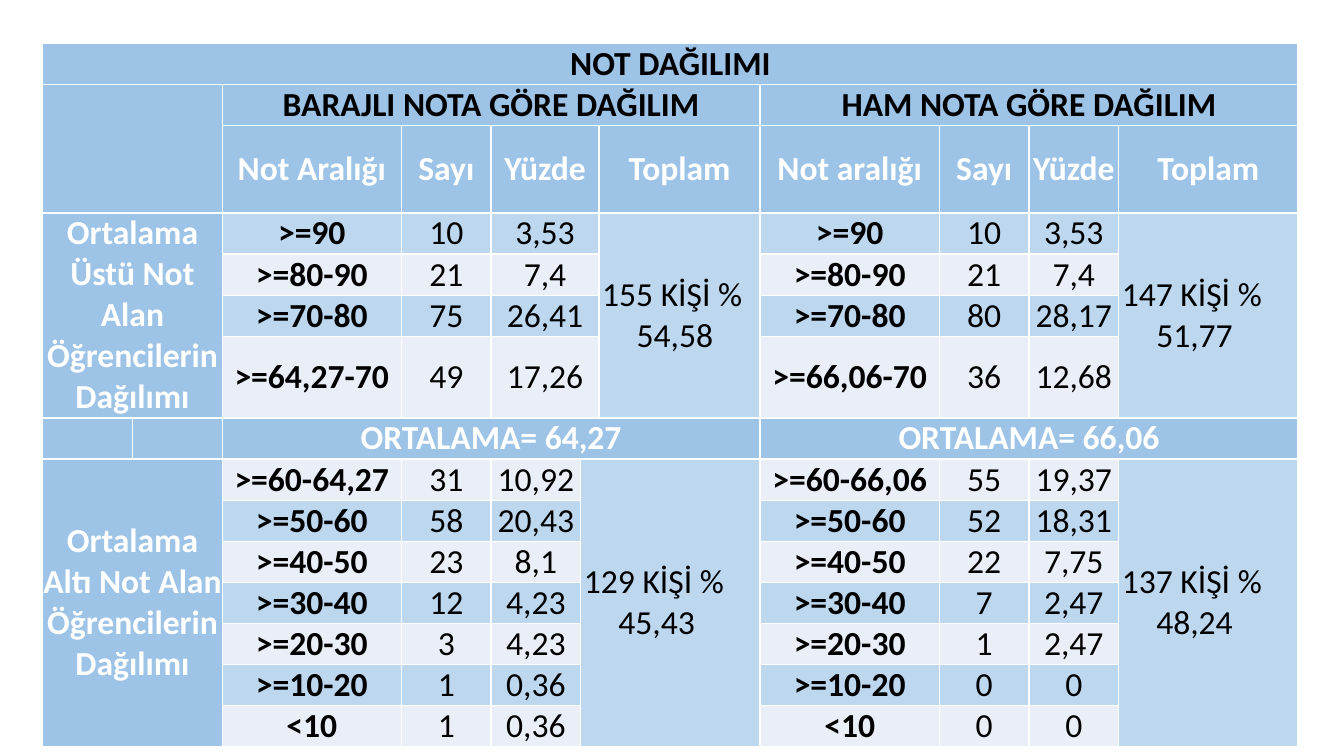
from dataclasses import dataclass

import pptx
import pptx.dml.color
import pptx.enum.text
import pptx.oxml
import pptx.oxml.ns
import pptx.util

Cm = pptx.util.Cm
ALIGN = pptx.enum.text.PP_ALIGN


@dataclass(frozen=True)
class Theme:
    """Colours and type of the grade table."""

    heading: str = "9DC3E6"
    band: str = "BDD7EE"
    pale: str = "EAEFF7"
    dark: str = "000000"
    white: str = "FFFFFF"
    font: str = "Calibri"
    size: int = 24
    border: int = 1


THEME = Theme()
COLUMN_WIDTHS = [2.26, 2.26, 4.52, 2.26, 2.26, 0.46, 4.06, 4.52, 2.26, 2.26, 4.52]
ROW_HEIGHTS = [0.92, 1.02, 2.2] + [1.02] * 3 + [1.7] + [1.02] * 8
LEFT_START, RIGHT_START = 2, 7
ABOVE_ROW, AVERAGE_ROW, BELOW_ROW = 3, 7, 8

ABOVE_BARRIER = [(">=90", "10", "3,53"), (">=80-90", "21", "7,4"),
                 (">=70-80", "75", "26,41"), (">=64,27-70", "49", "17,26")]
ABOVE_RAW = [(">=90", "10", "3,53"), (">=80-90", "21", "7,4"),
             (">=70-80", "80", "28,17"), (">=66,06-70", "36", "12,68")]
BELOW_BARRIER = [(">=60-64,27", "31", "10,92"), (">=50-60", "58", "20,43"),
                 (">=40-50", "23", "8,1"), (">=30-40", "12", "4,23"),
                 (">=20-30", "3", "4,23"), (">=10-20", "1", "0,36"), ("<10", "1", "0,36")]
BELOW_RAW = [(">=60-66,06", "55", "19,37"), (">=50-60", "52", "18,31"),
             (">=40-50", "22", "7,75"), (">=30-40", "7", "2,47"),
             (">=20-30", "1", "2,47"), (">=10-20", "0", "0"), ("<10", "0", "0")]


def add_borders(cell):
    """Draw a thin white line on each side of a cell."""
    properties = cell._tc.get_or_add_tcPr()
    for position, side in enumerate(("lnL", "lnR", "lnT", "lnB")):
        line = pptx.oxml.parse_xml(
            f'<a:{side} {pptx.oxml.ns.nsdecls("a")} w="{pptx.util.Pt(THEME.border)}">'
            f'<a:solidFill><a:srgbClr val="{THEME.white}"/></a:solidFill></a:{side}>')
        properties.insert(position, line)


def paint(cell, colour):
    """Fill a cell."""
    cell.fill.solid()
    cell.fill.fore_color.rgb = pptx.dml.color.RGBColor.from_string(colour)


def add_grid(slide):
    """Add the bordered table with heading colour in every cell."""
    frame = slide.shapes.add_table(
        len(ROW_HEIGHTS), len(COLUMN_WIDTHS), Cm(1.08), Cm(1.1),
        Cm(sum(COLUMN_WIDTHS)), Cm(sum(ROW_HEIGHTS)))
    grades = frame.table
    grades.first_row = grades.horz_banding = False
    for column, width in zip(grades.columns, COLUMN_WIDTHS):
        column.width = Cm(width)
    for row, height in zip(grades.rows, ROW_HEIGHTS):
        row.height = Cm(height)
    for cell in grades.iter_cells():
        cell.margin_left = cell.margin_right = cell.margin_top = cell.margin_bottom = 0
        cell.vertical_anchor = pptx.enum.text.MSO_ANCHOR.MIDDLE
        paint(cell, THEME.heading)
        add_borders(cell)
    return grades


def write(grades, row, column, text, fill=THEME.heading, colour=THEME.white,
          bold=True, span=(1, 1)):
    """Fill and label a cell, merged over span rows and columns, and return its paragraph."""
    cell = grades.cell(row, column)
    if span != (1, 1):
        cell.merge(grades.cell(row + span[0] - 1, column + span[1] - 1))
    paint(cell, fill)
    paragraph = cell.text_frame.paragraphs[0]
    paragraph.alignment = ALIGN.CENTER
    run = paragraph.add_run()
    run.text = text
    run.font.name = THEME.font
    run.font.size = pptx.util.Pt(THEME.size)
    run.font.bold = bold
    run.font.color.rgb = pptx.dml.color.RGBColor.from_string(colour)
    return paragraph


def write_total(grades, row, column, text, span):
    """Write a group total whose second line is indented."""
    paragraph = write(grades, row, column, text, THEME.band, THEME.dark, False, span)
    paragraph.alignment = ALIGN.LEFT
    properties = paragraph._p.get_or_add_pPr()
    properties.set("marL", str(Cm(0.95)))
    properties.set("indent", str(-Cm(0.87)))


def write_group(grades, first_row, start, grade_rows, total, percent_span, total_span):
    """Write the grade ranges of one group with their total."""
    for row, (grade, count, percent) in enumerate(grade_rows, first_row):
        fill = THEME.band if row % 2 else THEME.pale
        write(grades, row, start, grade, fill, THEME.dark)
        write(grades, row, start + 1, count, fill, THEME.dark, False)
        write(grades, row, start + 2, percent, fill, THEME.dark, False, (1, percent_span))
    write_total(grades, first_row, start + 2 + percent_span, total,
                (len(grade_rows), total_span))


def write_headings(grades, start, title, range_title, average, percent_span):
    """Write the title, column headings and average of one half."""
    width = 3 + percent_span
    write(grades, 1, start, title, colour=THEME.dark, span=(1, width))
    write(grades, 2, start, range_title)
    write(grades, 2, start + 1, "Sayı")
    write(grades, 2, start + 2, "Yüzde", span=(1, percent_span))
    write(grades, 2, start + 2 + percent_span, "Toplam")
    write(grades, AVERAGE_ROW, start, average, span=(1, width))


def main():
    """Build the grade distribution slide."""
    deck = pptx.Presentation()
    deck.slide_width, deck.slide_height = Cm(33.87), Cm(19.05)
    grades = add_grid(deck.slides.add_slide(deck.slide_layouts[6]))

    write(grades, 0, 0, "NOT DAĞILIMI", colour=THEME.dark, span=(1, len(COLUMN_WIDTHS)))
    grades.cell(1, 0).merge(grades.cell(2, 1))
    write(grades, ABOVE_ROW, 0, "Ortalama Üstü Not Alan Öğrencilerin Dağılımı",
          span=(len(ABOVE_RAW), 2))
    write(grades, BELOW_ROW, 0, "Ortalama Altı Not Alan Öğrencilerin Dağılımı",
          span=(len(BELOW_RAW), 2))

    write_headings(grades, LEFT_START, "BARAJLI NOTA GÖRE DAĞILIM", "Not Aralığı",
                   "ORTALAMA= 64,27", 2)
    write_headings(grades, RIGHT_START, "HAM NOTA GÖRE DAĞILIM", "Not aralığı",
                   "ORTALAMA= 66,06", 1)
    write_group(grades, ABOVE_ROW, LEFT_START, ABOVE_BARRIER, "155 KİŞİ % 54,58", 2, 1)
    write_group(grades, ABOVE_ROW, RIGHT_START, ABOVE_RAW, "147 KİŞİ % 51,77", 1, 1)
    write_group(grades, BELOW_ROW, LEFT_START, BELOW_BARRIER, "129 KİŞİ % 45,43", 1, 2)
    write_group(grades, BELOW_ROW, RIGHT_START, BELOW_RAW, "137 KİŞİ % 48,24", 1, 1)
    deck.save("out.pptx")


if __name__ == "__main__":
    main()
